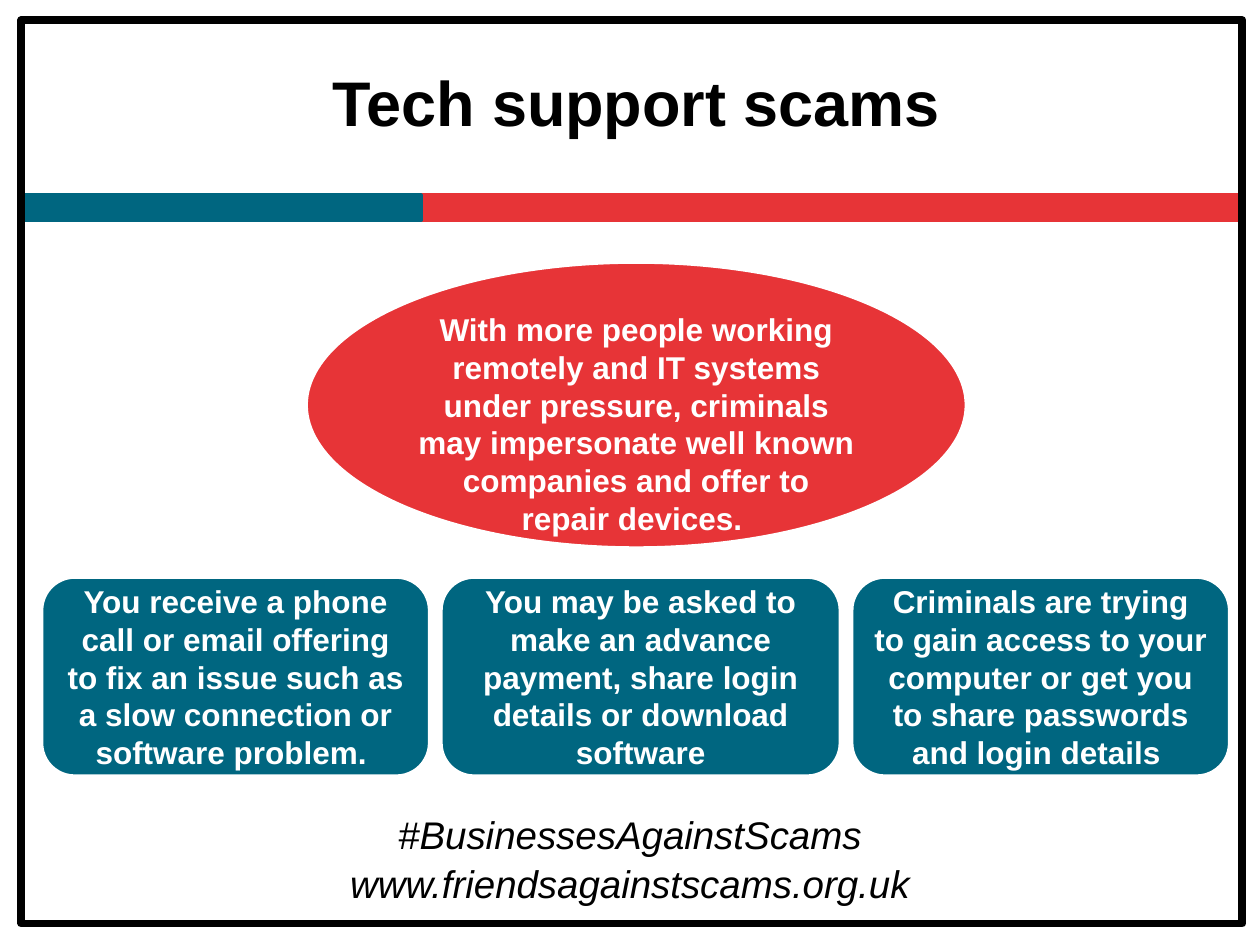
from dataclasses import dataclass

from pptx import Presentation
from pptx.dml.color import RGBColor
from pptx.enum.shapes import MSO_SHAPE
from pptx.enum.text import MSO_ANCHOR, PP_ALIGN
from pptx.util import Inches, Pt


@dataclass(frozen=True)
class Theme:
    """Colours, font and type sizes of the deck."""

    font: str = "Arial"
    black: RGBColor = RGBColor(0x00, 0x00, 0x00)
    white: RGBColor = RGBColor(0xFF, 0xFF, 0xFF)
    red: RGBColor = RGBColor(0xE7, 0x34, 0x37)
    teal: RGBColor = RGBColor(0x00, 0x66, 0x80)
    title_size: int = 36
    footer_size: int = 22
    body_size: int = 18
    outline: float = 2
    frame: float = 4.5


class SlideBuilder:
    """Draws styled elements on the current slide."""

    def __init__(self, page, theme):
        """Keep the slide and its style."""
        self.page = page
        self.theme = theme

    def set_text(self, shape, text, size, color, anchor, bold=False, italic=False):
        """Put one centred paragraph into a shape."""
        frame = shape.text_frame
        frame.word_wrap = True
        frame.vertical_anchor = anchor
        para = frame.paragraphs[0]
        para.text = text
        para.alignment = PP_ALIGN.CENTER
        font = para.font
        font.name = self.theme.font
        font.size = Pt(size)
        font.bold = bold
        font.italic = italic
        font.color.rgb = color

    def title(self, text, left, top, width, height):
        """Place the title in its placeholder."""
        title = self.page.shapes.title
        title.left, title.top = Inches(left), Inches(top)
        title.width, title.height = Inches(width), Inches(height)
        self.set_text(title, text, self.theme.title_size, self.theme.black,
                      MSO_ANCHOR.MIDDLE, bold=True)

    def shape(self, kind, left, top, width, height, fill, line, weight):
        """Add a preset shape, unfilled when fill is None."""
        shape = self.page.shapes.add_shape(
            kind, Inches(left), Inches(top), Inches(width), Inches(height))
        shape.shadow.inherit = False
        if fill is None:
            shape.fill.background()
        else:
            shape.fill.solid()
            shape.fill.fore_color.rgb = fill
        shape.line.color.rgb = line
        shape.line.width = Pt(weight)
        return shape

    def bar(self, left, top, width, height, color):
        """Add a plain coloured band."""
        self.shape(MSO_SHAPE.RECTANGLE, left, top, width, height,
                   color, color, self.theme.outline)

    def border(self, left, top, width, height):
        """Add the frame around the slide."""
        self.shape(MSO_SHAPE.RECTANGLE, left, top, width, height,
                   None, self.theme.black, self.theme.frame)

    def callout(self, kind, text, left, top, width, height, fill, anchor):
        """Add a filled shape with bold white text."""
        shape = self.shape(kind, left, top, width, height,
                           fill, self.theme.white, self.theme.outline)
        self.set_text(shape, text, self.theme.body_size, self.theme.white,
                      anchor, bold=True)

    def footer(self, text, top):
        """Add an italic line across the whole slide."""
        box = self.page.shapes.add_textbox(
            Inches(0), Inches(top), Inches(10), Inches(0.47))
        self.set_text(box, text, self.theme.footer_size, self.theme.black,
                      MSO_ANCHOR.TOP, italic=True)


def main():
    """Build the slide and save it."""
    deck = Presentation()
    deck.slide_width, deck.slide_height = Inches(10), Inches(7.5)
    theme = Theme()
    builder = SlideBuilder(deck.slides.add_slide(deck.slide_layouts[5]), theme)

    builder.bar(0.42, 1.55, 9.44, 0.2, theme.red)
    builder.bar(0.17, 1.55, 3.17, 0.2, theme.teal)
    builder.border(0.17, 0.16, 9.69, 7.17)
    builder.title("Tech support scams", 0.34, 0.18, 9.42, 1.25)
    builder.callout(
        MSO_SHAPE.OVAL,
        "With more people working remotely and IT systems under pressure, "
        "criminals may impersonate well known companies and offer to "
        "repair devices. ",
        2.43, 2.08, 5.24, 2.27, theme.red, MSO_ANCHOR.TOP)

    warnings = (
        (3.08, "You receive a phone call or email offering to fix an issue "
               "such as a slow connection or software problem. "),
        (3.17, "You may be asked to make an advance payment, share login "
               "details or download software"),
        (3.0, "Criminals are trying to gain access to your computer or get "
              "you to share passwords and login details "),
    )
    left, gap = 0.33, 0.09
    for width, text in warnings:
        builder.callout(MSO_SHAPE.ROUNDED_RECTANGLE, text, left, 4.58,
                        width, 1.58, theme.teal, MSO_ANCHOR.MIDDLE)
        left += width + gap

    builder.footer("#BusinessesAgainstScams", 6.39)
    builder.footer("www.friendsagainstscams.org.uk", 6.78)
    deck.save("out.pptx")


if __name__ == "__main__":
    main()
